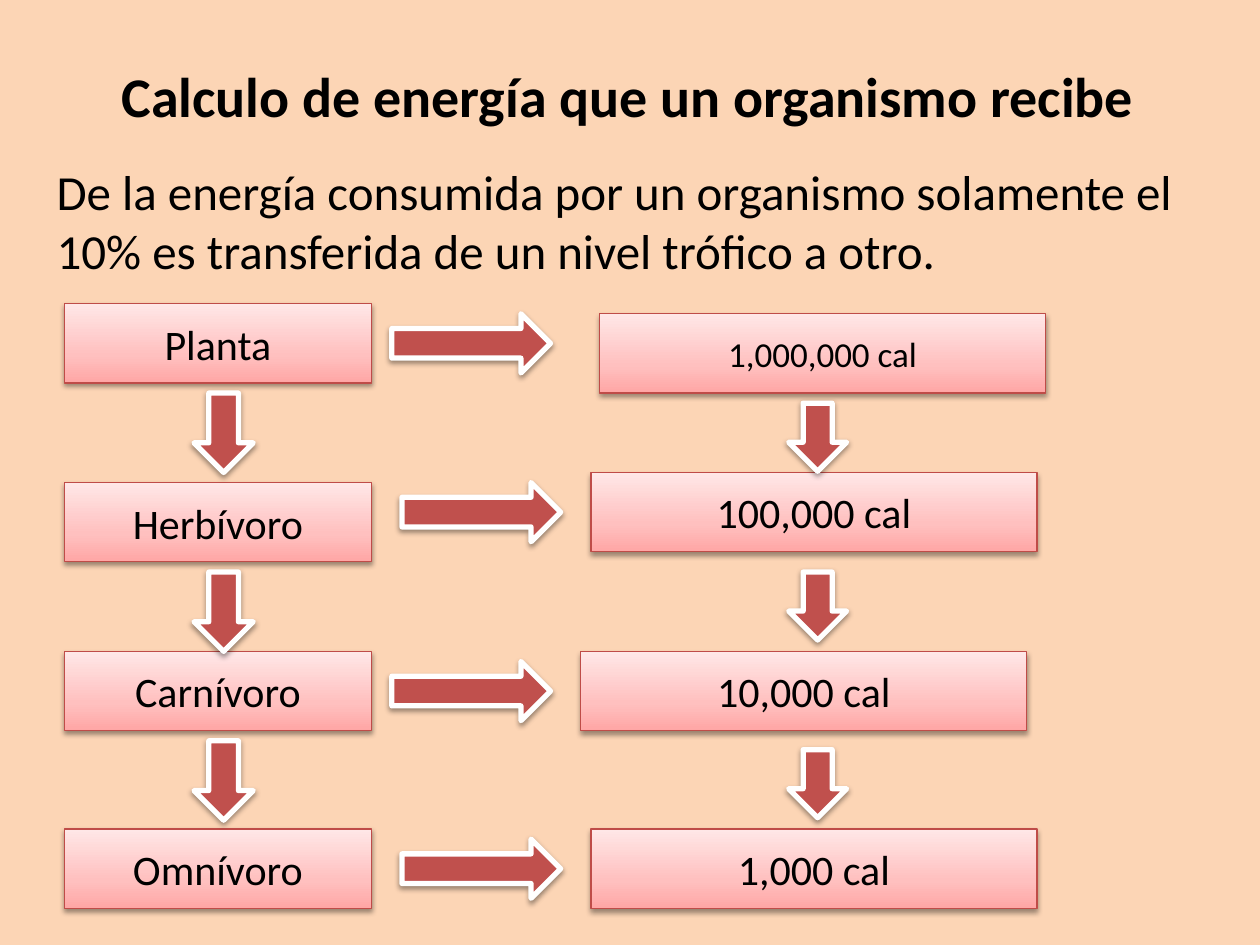
import pptx
import pptx.dml.color
import pptx.enum.shapes
import pptx.enum.text
import pptx.oxml
import pptx.oxml.ns
import pptx.util

Inches, Pt = pptx.util.Inches, pptx.util.Pt
SHAPE = pptx.enum.shapes.MSO_SHAPE
ALIGN = pptx.enum.text.PP_ALIGN
ANCHOR = pptx.enum.text.MSO_ANCHOR
NS = pptx.oxml.ns.nsdecls("a")

COLORS = {
    "background": "FCD5B5",
    "text": "000000",
    "arrow": "C0504D",
    "arrow_line": "FFFFFF",
    "box_line": "BF4C48",
    "shadow": "000000",
}
BOX_GRADIENT = [(0, "FFA6A5"), (35, "FFC0BF"), (100, "FFE7E7")]

TITLE = "Calculo de energía que un organismo recibe"
RULE = ("De la energía consumida por un organismo solamente el 10% "
        "es transferida de un nivel trófico a otro.")

# organism, its top, energy, energy left, energy top, energy text size
LEVELS = [
    ("Planta", 2.41, "1,000,000 cal", 4.76, 2.49, 20),
    ("Herbívoro", 3.83, "100,000 cal", 4.69, 3.75, 24),
    ("Carnívoro", 5.17, "10,000 cal", 4.61, 5.17, 24),
    ("Omnívoro", 6.58, "1,000 cal", 4.69, 6.58, 24),
]
ORGANISM_LEFT, ORGANISM_WIDTH = 0.51, 2.44
ENERGY_WIDTH, BOX_HEIGHT = 3.54, 0.63
GAP = 0.08
# left, top, width, height
ACROSS = [(3.11, 2.49), (3.19, 3.83), (3.11, 5.25), (3.19, 6.66)]
ACROSS_SIZE = (1.26, 0.47)
ENERGY_DOWN_TOPS = [3.2, 4.54, 5.95]


def rgb(name):
    return pptx.dml.color.RGBColor.from_string(COLORS[name])


def write(frame, text, size, align, bold=False, **frame_format):
    for name, value in frame_format.items():
        setattr(frame, name, value)
    frame.text = text
    paragraph = frame.paragraphs[0]
    for name, value in {"alignment": align, "space_before": Pt(0)}.items():
        setattr(paragraph, name, value)
    font = paragraph.runs[0].font
    for name, value in {"name": "Calibri", "size": Pt(size), "bold": bold}.items():
        setattr(font, name, value)
    font.color.rgb = rgb("text")
    return paragraph


def place(shape, *bounds):
    for name, value in zip(("left", "top", "width", "height"), bounds):
        setattr(shape, name, Inches(value))


def add_raised(slide, kind, bounds, line, line_width):
    """Add an outlined shape with a soft shadow below it."""
    shape = slide.shapes.add_shape(kind, *map(Inches, bounds))
    shape.line.color.rgb = rgb(line)
    shape.line.width = Pt(line_width)
    shape.shadow.inherit = False
    effects = shape.element.spPr.find(pptx.oxml.ns.qn("a:effectLst"))
    effects.append(pptx.oxml.parse_xml(
        f'<a:outerShdw {NS} blurRad="{Pt(3.1)}" dist="{Pt(1.6)}" dir="5400000" rotWithShape="0">'
        f'<a:srgbClr val="{COLORS["shadow"]}"><a:alpha val="38000"/></a:srgbClr></a:outerShdw>'))
    return shape


def add_box(slide, text, size, *bounds):
    box = add_raised(slide, SHAPE.RECTANGLE, bounds, "box_line", 0.75)
    box.fill.gradient()
    box.fill.gradient_angle = 90
    stops = box.element.spPr.find(".//" + pptx.oxml.ns.qn("a:gsLst"))
    stops.clear()
    for position, color in BOX_GRADIENT:
        stops.append(pptx.oxml.parse_xml(
            f'<a:gs {NS} pos="{position * 1000}"><a:srgbClr val="{color}"/></a:gs>'))
    write(box.text_frame, text, size, ALIGN.CENTER, vertical_anchor=ANCHOR.MIDDLE)


def add_arrow(slide, kind, *bounds):
    arrow = add_raised(slide, kind, bounds, "arrow_line", 3)
    arrow.fill.solid()
    arrow.fill.fore_color.rgb = rgb("arrow")


def main():
    deck = pptx.Presentation()
    deck.slide_width, deck.slide_height = Inches(10), Inches(7.5)
    slide = deck.slides.add_slide(deck.slide_layouts[1])
    slide.background.fill.solid()
    slide.background.fill.fore_color.rgb = rgb("background")

    title, rule = slide.placeholders
    fixed = {"auto_size": pptx.enum.text.MSO_AUTO_SIZE.NONE, "vertical_anchor": ANCHOR.TOP}
    place(title, 0.83, 0.44, 8.31, 0.64)
    write(title.text_frame, TITLE, 32, ALIGN.CENTER, bold=True, word_wrap=False, **fixed)
    place(rule, 0.35, 1.23, 9.29, 1.04)
    paragraph = write(rule.text_frame, RULE, 28, ALIGN.LEFT, word_wrap=True, **fixed)
    properties = paragraph._p.get_or_add_pPr()
    for name in ("marL", "indent"):
        properties.set(name, "0")
    properties.append(pptx.oxml.parse_xml(f"<a:buNone {NS}/>"))

    for organism, top, energy, energy_left, energy_top, size in LEVELS:
        add_box(slide, organism, 24, ORGANISM_LEFT, top, ORGANISM_WIDTH, BOX_HEIGHT)
        add_box(slide, energy, size, energy_left, energy_top, ENERGY_WIDTH, BOX_HEIGHT)

    for left, top in ACROSS:
        add_arrow(slide, SHAPE.RIGHT_ARROW, left, top, *ACROSS_SIZE)
    for level, energy_down_top in zip(LEVELS, ENERGY_DOWN_TOPS):
        add_arrow(slide, SHAPE.DOWN_ARROW, 1.54, level[1] + BOX_HEIGHT + GAP, 0.47, 0.63)
        add_arrow(slide, SHAPE.DOWN_ARROW, 6.26, energy_down_top, 0.46, 0.54)

    deck.save("out.pptx")


if __name__ == "__main__":
    main()
